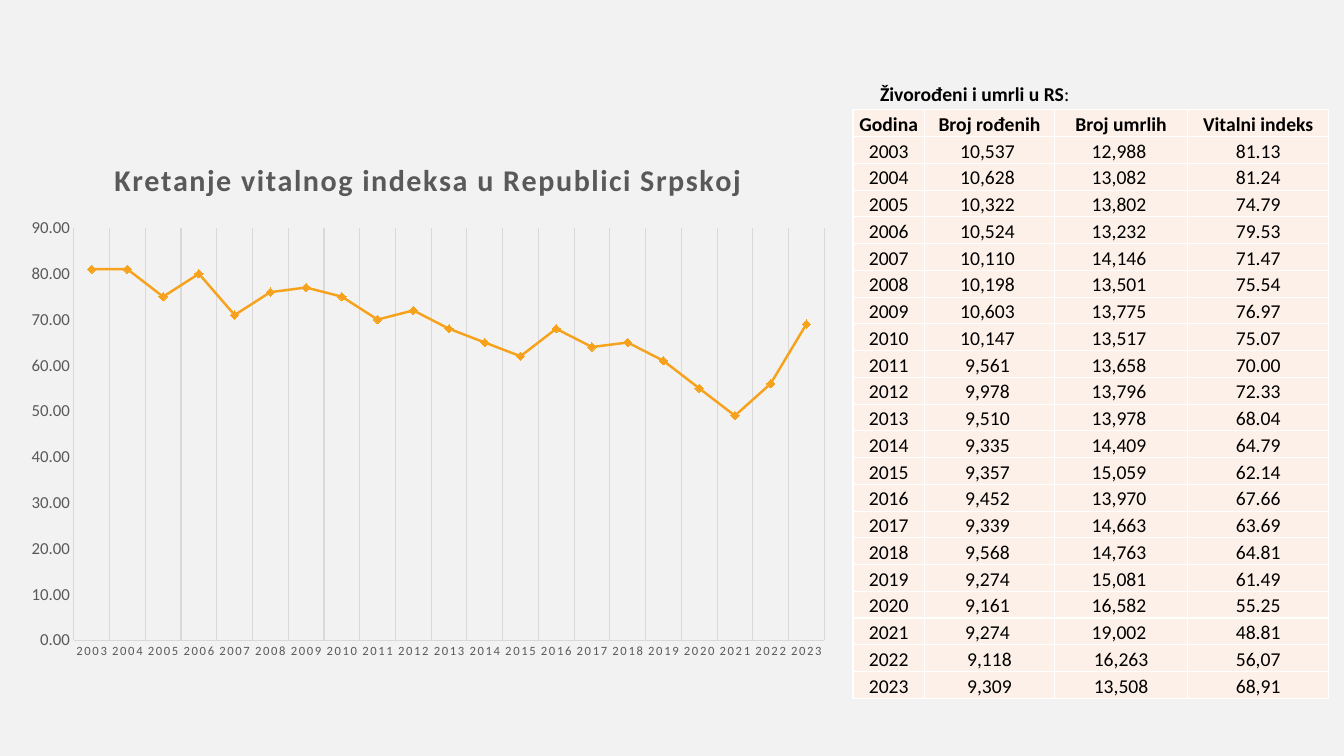
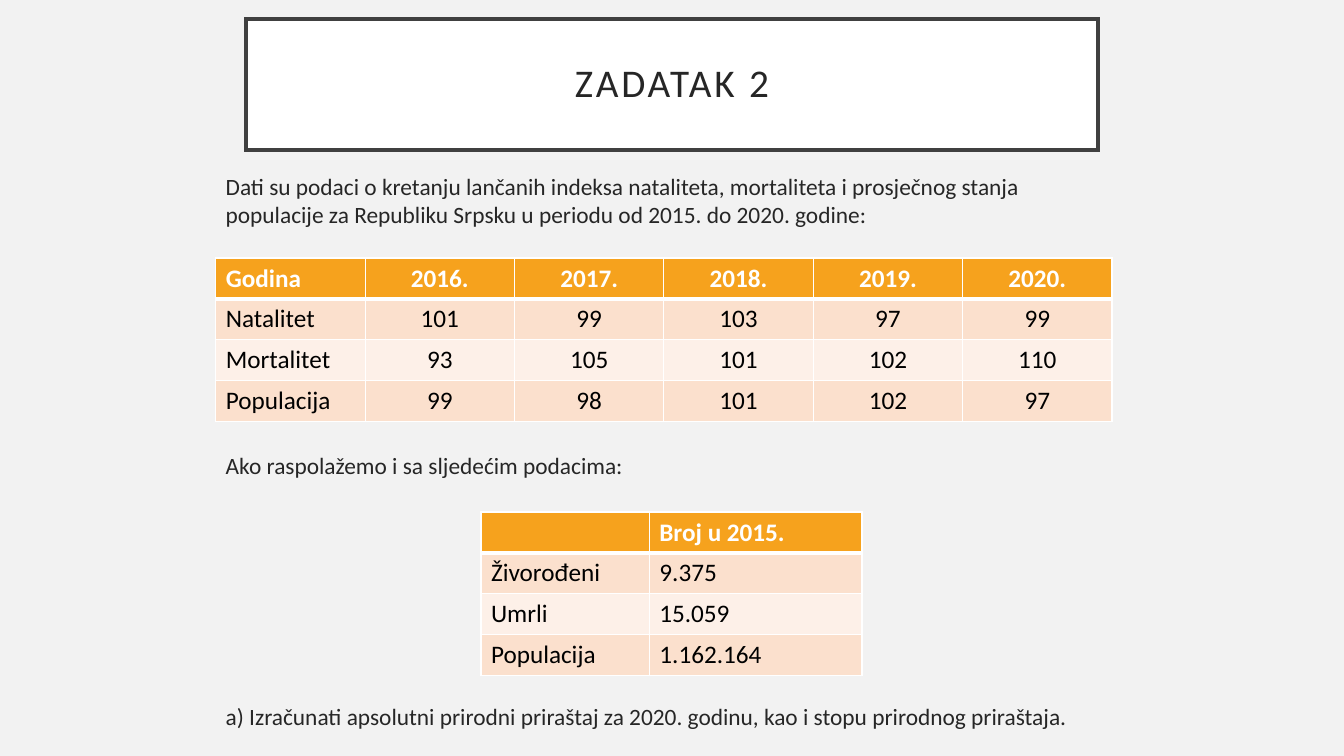
from pptx import Presentation
from pptx.chart.data import CategoryChartData
from pptx.dml.color import RGBColor as Rgb
from pptx.enum.chart import XL_CHART_TYPE as Kind, XL_MARKER_STYLE as Mark, XL_TICK_MARK as Tick
from pptx.enum.shapes import MSO_SHAPE as Geo
from pptx.enum.text import MSO_ANCHOR as Anchor, PP_ALIGN as Align
from pptx.oxml import parse_xml
from pptx.oxml.ns import nsdecls
from pptx.util import Inches, Pt

YEARS = [
    ("Godina", "Broj rođenih", "Broj umrlih", "Vitalni indeks"),
    ("2003", "10,537", "12,988", "81.13"),
    ("2004", "10,628", "13,082", "81.24"),
    ("2005", "10,322", "13,802", "74.79"),
    ("2006", "10,524", "13,232", "79.53"),
    ("2007", "10,110", "14,146", "71.47"),
    ("2008", "10,198", "13,501", "75.54"),
    ("2009", "10,603", "13,775", "76.97"),
    ("2010", "10,147", "13,517", "75.07"),
    ("2011", "9,561", "13,658", "70.00"),
    ("2012", "9,978", "13,796", "72.33"),
    ("2013", "9,510", "13,978", "68.04"),
    ("2014", "9,335", "14,409", "64.79"),
    ("2015", "9,357", "15,059", "62.14"),
    ("2016", "9,452", "13,970", "67.66"),
    ("2017", "9,339", "14,663", "63.69"),
    ("2018", "9,568", "14,763", "64.81"),
    ("2019", "9,274", "15,081", "61.49"),
    ("2020", "9,161", "16,582", "55.25"),
    ("2021", "9,274", "19,002", "48.81"),
    ("2022", "9,118", "16,263", "56,07"),
    ("2023", "9,309", "13,508", "68,91"),
]
CHAINS = [
    ("Godina", "2016.", "2017.", "2018.", "2019.", "2020."),
    ("Natalitet", "101", "99", "103", "97", "99"),
    ("Mortalitet", "93", "105", "101", "102", "110"),
    ("Populacija", "99", "98", "101", "102", "97"),
]
BASE = [
    ("", "Broj u 2015."),
    ("Živorođeni", "9.375"),
    ("Umrli", "15.059"),
    ("Populacija", "1.162.164"),
]
TASK = [
    (1.66, "Dati su podaci o kretanju lančanih indeksa nataliteta, mortaliteta i prosječnog "
           "stanja populacije za Republiku Srpsku u periodu od 2015. do 2020. godine:"),
    (4.43, "Ako raspolažemo i sa sljedećim podacima:"),
    (6.92, "a) Izračunati apsolutni prirodni priraštaj za 2020. godinu, "
           "kao i stopu prirodnog priraštaja."),
]
CAPTION = [("Živorođeni i umrli u RS", True), (":", False)]
TREND = "Kretanje vitalnog indeksa u Republici Srpskoj"

THEME = dict(
    font="Calibri", back="F2F2F2", accent="F6A21D", pale="FDF0E8", band="FBE0CD",
    white="FFFFFF", black="000000", ink="262626", gray="595959", rule="D9D9D9", frame="404040",
    title=28, trend=21.5, cell=18, small=14, body=16.7, value=12, year=9,
)


def tint(name):
    return Rgb.from_string(THEME[name])


def style(font, size, color, bold=False):
    look = dict(name=THEME["font"], size=Pt(THEME[size]), bold=bold)
    for key, val in look.items():
        setattr(font, key, val)
    font.color.rgb = tint(color)


def space(font, points):
    """Set letter spacing, which python-pptx does not offer."""
    font._element.set("spc", str(int(points * 100)))


def new_slide(deck):
    slide = deck.slides.add_slide(deck.slide_layouts[6])
    slide.background.fill.solid()
    slide.background.fill.fore_color.rgb = tint("back")
    return slide


def add_text(slide, box, runs, size, color):
    frame = slide.shapes.add_textbox(*map(Inches, box)).text_frame
    frame.word_wrap = True
    for text, bold in runs:
        run = frame.paragraphs[0].add_run()
        run.text = text
        style(run.font, size, color, bold)


def edge(cell, below):
    """Draw white cell borders, with the lower one `below` points wide."""
    props = cell._tc.get_or_add_tcPr()
    for side, width in zip("LRTB", (1, 1, 1, below)):
        props.append(parse_xml(
            f'<a:ln{side} {nsdecls("a")} w="{Pt(width)}"><a:solidFill>'
            f'<a:srgbClr val="{THEME["white"]}"/></a:solidFill></a:ln{side}>'))


def add_grid(slide, rows, box, cols, dense=False, middle=True):
    """Add a table; a dense one has tight cells of a single colour."""
    grid = slide.shapes.add_table(len(rows), len(cols), *map(Inches, box)).table
    grid.horz_banding = False
    grid.first_row = not dense
    for col, width in zip(grid.columns, cols):
        col.width = Inches(width)
    for r, row in enumerate(rows):
        grid.rows[r].height = Inches(box[3] / len(rows))
        head = r == 0
        fill = "pale" if dense else "accent" if head else "band" if r % 2 else "pale"
        for c, text in enumerate(row):
            cell = grid.cell(r, c)
            edge(cell, 3 if head and not dense else 1)
            cell.fill.solid()
            cell.fill.fore_color.rgb = tint(fill)
            if dense:
                count = "," in text and c in (1, 2) and r < len(rows) - 2
                tight = dict(margin_left=Inches(.01), margin_right=Inches(.05 if count else .01),
                             margin_top=Inches(.01), margin_bottom=0,
                             vertical_anchor=Anchor.BOTTOM)
                for key, val in tight.items():
                    setattr(cell, key, val)
            para = cell.text_frame.paragraphs[0]
            if dense or (middle and c):
                para.alignment = Align.CENTER
            if text:
                run = para.add_run()
                run.text = text
                style(run.font, "small" if dense else "cell",
                      "white" if head and not dense else "black", head)


def place_plot(chart, x, y, w, h):
    """Fix the inner plot area, in shares of the chart."""
    area = chart._chartSpace.chart.plotArea
    for old in area.xpath("c:layout"):
        area.remove(old)
    spots = "".join(f'<c:{key} val="{val}"/>' for key, val in dict(x=x, y=y, w=w, h=h).items())
    area.insert(0, parse_xml(
        f'<c:layout {nsdecls("c")}><c:manualLayout><c:layoutTarget val="inner"/>'
        f'<c:xMode val="edge"/><c:yMode val="edge"/>{spots}</c:manualLayout></c:layout>'))


def add_trend(slide, box):
    data = CategoryChartData(number_format="0.00")
    data.categories = [row[0] for row in YEARS[1:]]
    data.add_series("Vitalni indeks",
                    [round(float(row[3].replace(",", "."))) for row in YEARS[1:]])
    chart = slide.shapes.add_chart(Kind.LINE_MARKERS, *map(Inches, box), data).chart
    chart.has_legend = False
    chart.font.name = THEME["font"]
    para = chart.chart_title.text_frame.paragraphs[0]
    run = para.add_run()
    run.text = TREND
    style(run.font, "trend", "gray", True)
    space(run.font, 1)
    place_plot(chart, .07, .17, .91, .77)

    for axis, size in ((chart.category_axis, "year"), (chart.value_axis, "value")):
        axis.major_tick_mark = axis.minor_tick_mark = Tick.NONE
        style(axis.tick_labels.font, size, "gray")
        axis.format.line.color.rgb = tint("rule")
        axis.format.line.width = Pt(.75)
    years, index = chart.category_axis, chart.value_axis
    space(years.tick_labels.font, 1.2)
    years.has_major_gridlines = True
    years.major_gridlines.format.line.color.rgb = tint("rule")
    years.major_gridlines.format.line.width = Pt(.75)
    index.has_major_gridlines = False
    index.minimum_scale, index.maximum_scale, index.major_unit = 0, 90, 10
    index.tick_labels.number_format = "0.00"
    index.tick_labels.number_format_is_linked = False

    chart.plots[0].vary_by_categories = False
    line = chart.plots[0].series[0]
    line.smooth = False
    line.format.line.color.rgb = tint("accent")
    line.format.line.width = Pt(1.75)
    line.marker.style, line.marker.size = Mark.DIAMOND, 6
    line.marker.format.fill.solid()
    line.marker.format.fill.fore_color.rgb = tint("accent")
    line.marker.format.line.color.rgb = tint("accent")


def add_title(slide, text):
    box = slide.shapes.add_shape(Geo.RECTANGLE, *map(Inches, (2.44, .19, 8.45, 1.3)))
    box.shadow.inherit = False
    box.fill.solid()
    box.fill.fore_color.rgb = tint("white")
    box.line.color.rgb = tint("frame")
    box.line.width = Pt(2.5)
    box.line._get_or_add_ln().append(parse_xml(f'<a:miter {nsdecls("a")} lim="800000"/>'))
    box.text_frame.vertical_anchor = Anchor.MIDDLE
    para = box.text_frame.paragraphs[0]
    para.alignment, para.line_spacing = Align.CENTER, .9
    run = para.add_run()
    run.text = text
    style(run.font, "title", "ink")
    space(run.font, 2)


def main():
    deck = Presentation()
    deck.slide_width, deck.slide_height = Inches(13.33), Inches(7.5)

    vital = new_slide(deck)
    add_grid(vital, YEARS, (8.46, 1.09, 4.72, 5.84), (.71, 1.29, 1.32, 1.4), dense=True)
    add_text(vital, (8.63, .76, 4.34, .34), CAPTION, "small", "black")
    add_trend(vital, (.16, 1.36, 8.18, 5.31))

    task = new_slide(deck)
    add_title(task, "ZADATAK 2")
    for top, text in TASK:
        add_text(task, (2.14, top, 8.9, .4), [(text, False)], "body", "ink")
    add_grid(task, CHAINS, (2.14, 2.56, 8.89, 1.62), [8.89 / 6] * 6)
    add_grid(task, BASE, (4.77, 5.08, 3.78, 1.62), (1.67, 2.11), middle=False)

    deck.save("out.pptx")


if __name__ == "__main__":
    main()
